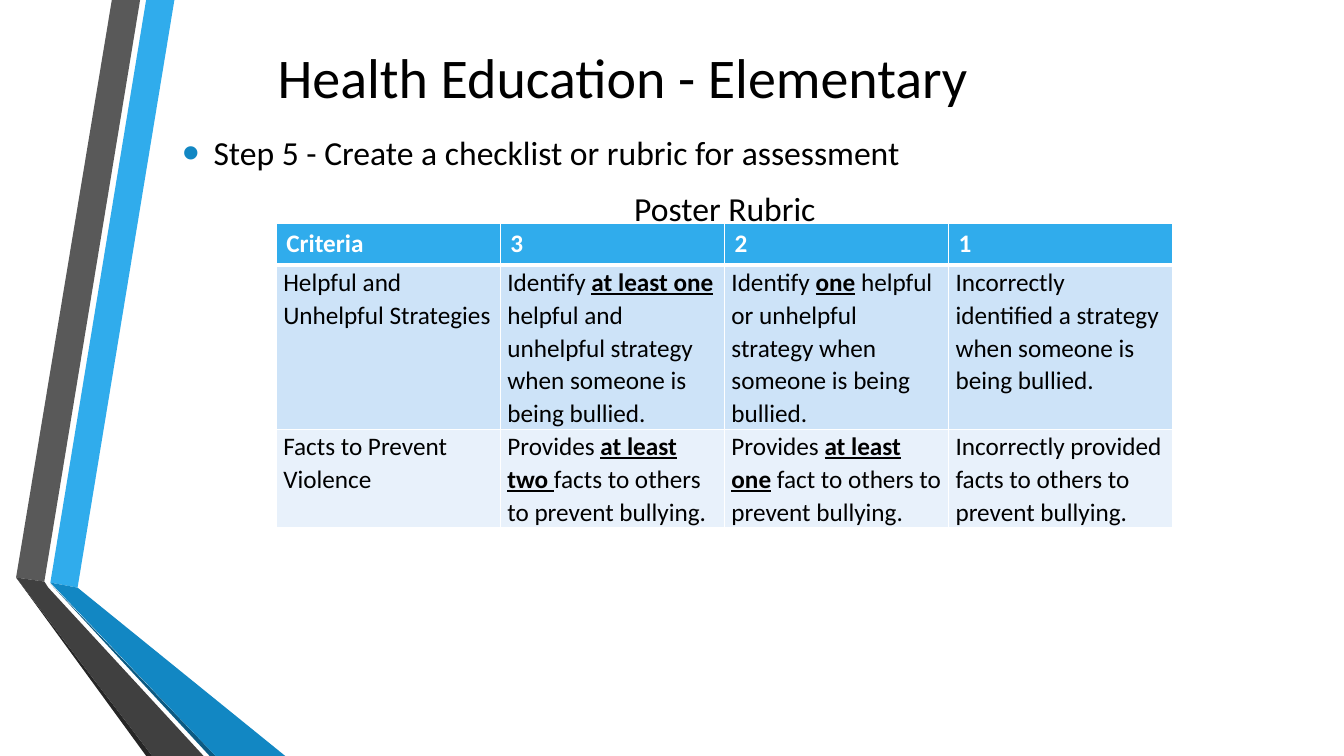
from dataclasses import dataclass

from lxml import etree
from pptx import Presentation
from pptx.dml.color import RGBColor
from pptx.enum.text import MSO_ANCHOR, PP_ALIGN
from pptx.oxml.ns import qn
from pptx.util import Inches, Pt

LEFT, CENTER = PP_ALIGN.LEFT, PP_ALIGN.CENTER
TOP, MIDDLE = MSO_ANCHOR.TOP, MSO_ANCHOR.MIDDLE

# The slide is a fine grid of 1333 columns by 750 rows
GRID = Inches(0.01)
COLUMNS, ROWS = 1333, 750


@dataclass(frozen=True)
class Theme:
    font: str = "Calibri"
    title_size: int = 40
    body_size: int = 24
    table_size: int = 18
    text: str = "000000"
    white: str = "FFFFFF"
    sky: str = "30ACEC"
    blue: str = "1287C3"
    navy: str = "0C5A82"
    gray: str = "595959"
    charcoal: str = "404040"
    soot: str = "262626"
    bands: tuple = ("CDE3F8", "E8F1FB")


THEME = Theme()

# Folded ribbons: colour and outline in grid units
RIBBONS = [
    (THEME.sky, [(50, 578), (77, 583), (173, 0), (145, 0)]),
    (THEME.gray, [(139, 0), (111, 0), (16, 573), (44, 577)]),
    (THEME.soot, [(16, 573), (145, 750), (151, 750)]),
    (THEME.navy, [(50, 579), (208, 750), (214, 750)]),
    (THEME.blue, [(50, 578), (214, 750), (283, 750), (77, 583)]),
    (THEME.charcoal, [(202, 750), (48, 583), (44, 577), (16, 573), (151, 750)]),
]

# Cells are split at "|"; every second piece is emphasised
RUBRIC = [
    ["Criteria", "3", "2", "1"],
    ["Helpful and Unhelpful Strategies",
     "Identify |at least one |helpful and unhelpful strategy when someone is being bullied.",
     "Identify |one| helpful or unhelpful strategy when someone is being bullied.",
     "Incorrectly identified a strategy when someone is being bullied."],
    ["Facts to Prevent Violence",
     "Provides |at least two |facts to others to prevent bullying.",
     "Provides |at least one| fact to others to prevent bullying.",
     "Incorrectly provided facts to others to prevent bullying."],
]
COLUMN_WIDTH = 222.25
ROW_HEIGHTS = [41, 163, 97]


def grid(*values):
    return [round(value * GRID) for value in values]


def apply(target, **values):
    for name, value in values.items():
        setattr(target, name, value)


def add_run(paragraph, text, size, color=THEME.text, **style):
    run = paragraph.add_run()
    run.text = text
    apply(run.font, name=THEME.font, size=Pt(size), **style)
    run.font.color.rgb = RGBColor.from_string(color)


def add_ribbon(slide, color, points):
    builder = slide.shapes.build_freeform(*points[0], scale=GRID)
    builder.add_line_segments(points[1:], close=True)
    shape = builder.convert_to_shape()
    shape.shadow.inherit = False
    shape.fill.solid()
    shape.fill.fore_color.rgb = RGBColor.from_string(color)
    shape.line.fill.background()


def add_text_box(slide, area, anchor, **margins):
    frame = slide.shapes.add_textbox(*grid(*area)).text_frame
    apply(frame, word_wrap=True, vertical_anchor=anchor, **margins)
    return frame


def add_bullet(paragraph, color, percent, indent):
    properties = paragraph._p.get_or_add_pPr()
    properties.set("marL", str(indent))
    properties.set("indent", str(-indent))
    bullet_color = etree.SubElement(properties, qn("a:buClr"))
    etree.SubElement(bullet_color, qn("a:srgbClr"), val=color)
    etree.SubElement(properties, qn("a:buSzPct"), val=str(percent * 1000))
    etree.SubElement(properties, qn("a:buFont"), typeface="Arial")
    etree.SubElement(properties, qn("a:buChar"), char="•")


def set_borders(cell, **widths):
    properties = cell._tc.get_or_add_tcPr()
    for side, width in widths.items():
        line = etree.SubElement(properties, qn(f"a:ln{side}"), w=str(Pt(width)))
        fill = etree.SubElement(line, qn("a:solidFill"))
        etree.SubElement(fill, qn("a:srgbClr"), val=THEME.white)


def fill_cell(cell, text, row):
    is_header = row == 0
    set_borders(cell, L=1, R=1, T=3 if row == 1 else 1, B=3 if is_header else 1)
    cell.fill.solid()
    color = THEME.sky if is_header else THEME.bands[(row - 1) % 2]
    cell.fill.fore_color.rgb = RGBColor.from_string(color)
    paragraph = cell.text_frame.paragraphs[0]
    if is_header:
        add_run(paragraph, text, THEME.table_size, THEME.white, bold=True)
        return
    side = Inches(0.07)
    apply(cell, margin_left=side, margin_right=side, margin_top=0, margin_bottom=0)
    paragraph.line_spacing = 1.07
    for index, piece in enumerate(text.split("|")):
        strong = index % 2 == 1
        add_run(paragraph, piece, THEME.table_size, bold=strong, underline=strong)


def add_rubric(slide, left, top):
    count = len(RUBRIC[0])
    area = grid(left, top, COLUMN_WIDTH * count, sum(ROW_HEIGHTS))
    table = slide.shapes.add_table(len(RUBRIC), count, *area).table
    for column in table.columns:
        column.width = grid(COLUMN_WIDTH)[0]
    for row, texts in enumerate(RUBRIC):
        table.rows[row].height = grid(ROW_HEIGHTS[row])[0]
        for column, text in enumerate(texts):
            fill_cell(table.cell(row, column), text, row)


def main():
    presentation = Presentation()
    presentation.slide_width, presentation.slide_height = grid(COLUMNS, ROWS)
    slide = presentation.slides.add_slide(presentation.slide_layouts[6])

    # Ribbons on the left
    for color, points in RIBBONS:
        add_ribbon(slide, color, points)

    # Title
    title = add_text_box(slide, (171, 24, 893, 102), MIDDLE).paragraphs[0]
    title.alignment = CENTER
    add_run(title, "Health Education - Elementary", THEME.title_size)

    # Step and table heading
    body = add_text_box(slide, (171, 131, 1096, 144), TOP, margin_top=0)
    step = body.paragraphs[0]
    add_bullet(step, THEME.blue, 145, Inches(0.31))
    apply(step, alignment=LEFT, space_after=Pt(6))
    add_run(step, "Step 5 - Create a checklist or rubric for assessment", THEME.body_size)
    heading = body.add_paragraph()
    apply(heading, alignment=CENTER, space_before=Pt(4.8))
    add_run(heading, "Poster Rubric", THEME.body_size)

    # Rubric table
    add_rubric(slide, 274, 222)

    presentation.save("out.pptx")


if __name__ == "__main__":
    main()
